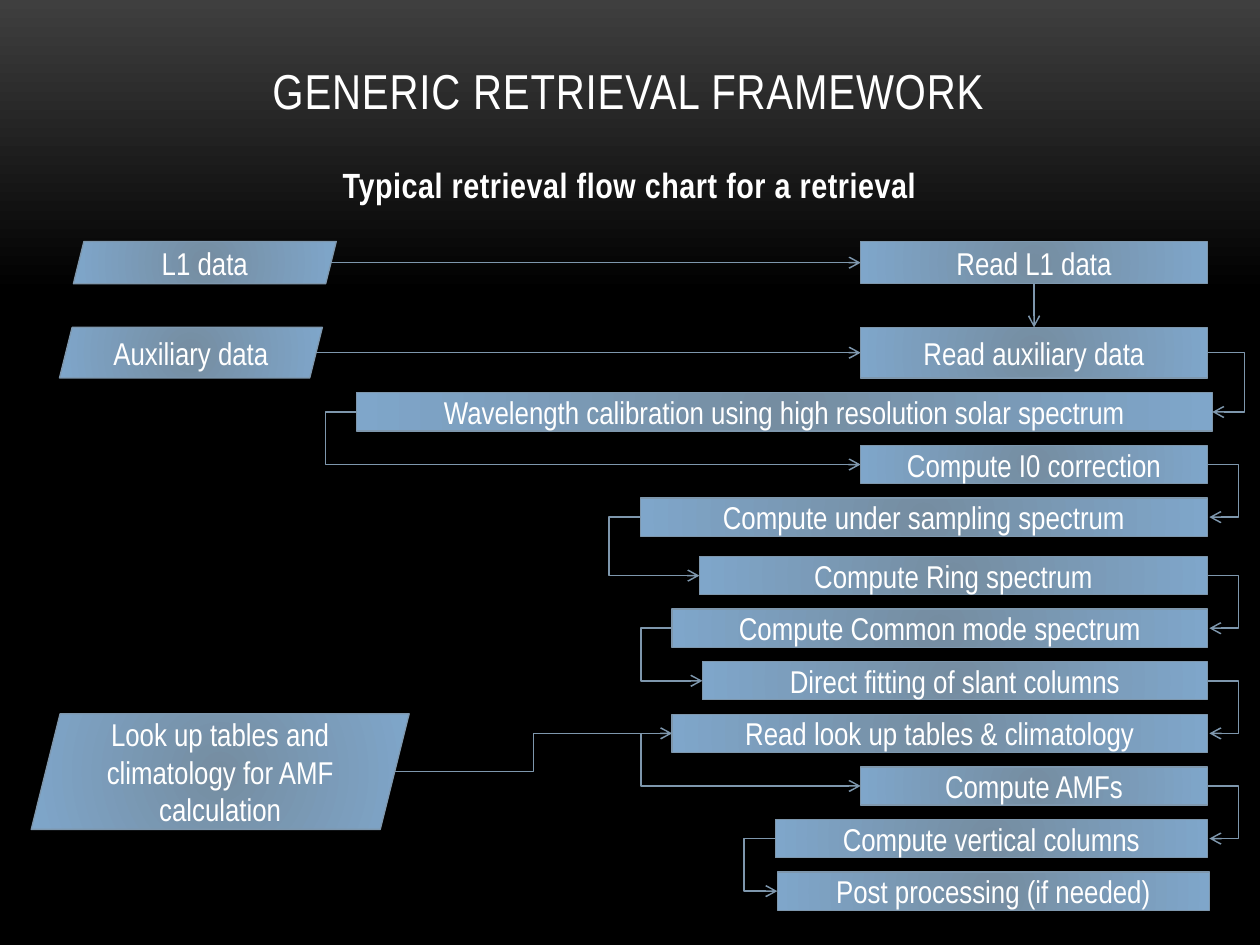
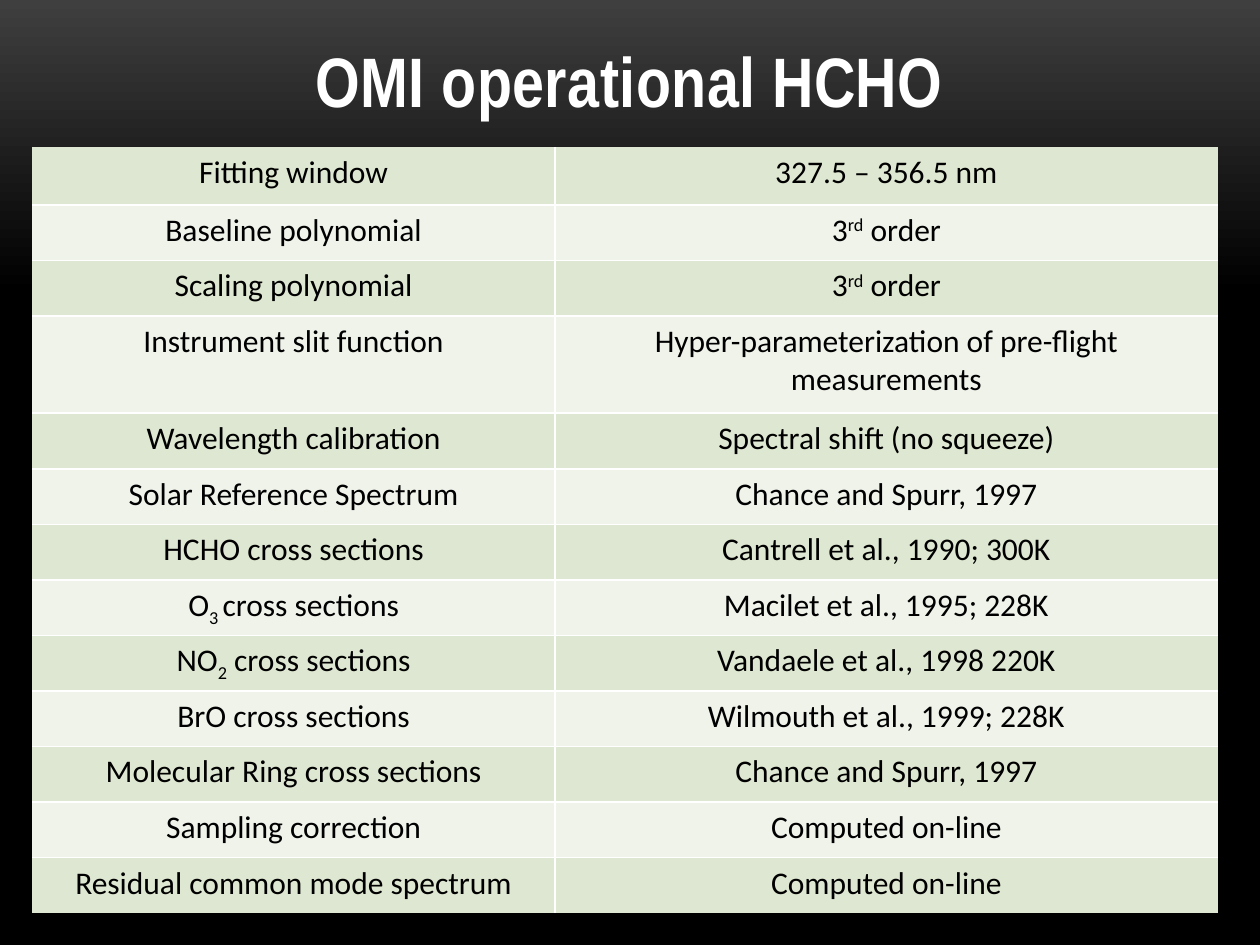
from lxml.etree import SubElement
from pptx import Presentation
from pptx.dml.color import RGBColor
from pptx.enum.shapes import MSO_CONNECTOR, MSO_SHAPE
from pptx.enum.text import MSO_ANCHOR, PP_ALIGN
from pptx.oxml.ns import qn
from pptx.util import Cm, Pt

WHITE = RGBColor(0xFF, 0xFF, 0xFF)
BLACK = RGBColor(0x00, 0x00, 0x00)
CHARCOAL = RGBColor(0x3F, 0x3F, 0x3F)
SLATE = RGBColor(0x75, 0x8D, 0xA1)
SKY = RGBColor(0x7F, 0xA6, 0xCA)
STEEL = RGBColor(0x7E, 0x97, 0xAD)
SAGE = RGBColor(0xDE, 0xE7, 0xD1)
PALE_SAGE = RGBColor(0xEF, 0xF3, 0xEA)
HEADING_FONT, TABLE_FONT = "Arial Narrow", "Calibri"

FRAMEWORK_TITLE = "GENERIC RETRIEVAL FRAMEWORK"
FRAMEWORK_SUBTITLE = "Typical retrieval flow chart for a retrieval"
SETTINGS_TITLE = "OMI operational HCHO"

# Text, left, width of each processing step, from first to last
STEPS = [
    ("Read L1 data", 17.35, 6.99),
    ("Read auxiliary data", 17.35, 6.99),
    ("Wavelength calibration using high resolution solar spectrum", 7.19, 17.25),
    ("Compute I0 correction", 17.35, 6.99),
    ("Compute under sampling spectrum", 12.91, 11.43),
    ("Compute Ring spectrum", 14.1, 10.24),
    ("Compute Common mode spectrum", 13.55, 10.79),
    ("Direct fitting of slant columns", 14.16, 10.18),
    ("Read look up tables & climatology", 13.55, 10.79),
    ("Compute AMFs", 17.35, 6.99),
    ("Compute vertical columns", 15.63, 8.71),
    ("Post processing (if needed)", 15.67, 8.71),
]
STEP_PITCH, STEP_HEIGHT = 1.06, 0.77
READ_ROWS = [(4.87, 0.85), (6.6, 1.02)]
STEP_ROWS = (
    READ_ROWS
    + [(7.92 + STEP_PITCH * i, STEP_HEIGHT) for i in range(3)]
    + [(11.22 + STEP_PITCH * i, STEP_HEIGHT) for i in range(7)]
)

# Text, box, index of the step that takes the input
INPUTS = [
    ("L1 data", (1.48, 4.87, 5.3, 0.85), 0),
    ("Auxiliary data", (1.2, 6.6, 5.3, 1.02), 1),
    ("Look up tables and climatology for AMF calculation", (0.63, 14.39, 7.62, 2.33), 8),
]

LOOP_REACH = 0.63
WIDE_LOOP_REACH = 0.75
MIN_LOOP_WIDTH = 0.04
TOP, LEFT, BOTTOM, RIGHT = range(4)
PARALLELOGRAM_RIGHT = 5

# A cell is a string, or a list of (text, baseline shift in percent)
THIRD_ORDER = [("3", 0), ("rd", 30), (" order", 0)]
SETTINGS = [
    ("Fitting window", "327.5 – 356.5 nm"),
    ("Baseline polynomial", THIRD_ORDER),
    ("Scaling polynomial", THIRD_ORDER),
    ("Instrument slit function", "Hyper-parameterization of pre-flight measurements"),
    ("Wavelength calibration", "Spectral shift (no squeeze)"),
    ("Solar Reference Spectrum", "Chance and Spurr, 1997"),
    ("HCHO cross sections", "Cantrell et al., 1990; 300K"),
    ([("O", 0), ("3 ", -25), ("cross sections", 0)], "Macilet et al., 1995; 228K"),
    ([("NO", 0), ("2", -25), (" cross sections", 0)], "Vandaele et al., 1998 220K"),
    ("BrO cross sections", "Wilmouth et al., 1999; 228K"),
    ("Molecular Ring cross sections", "Chance and Spurr, 1997"),
    ("Sampling correction", "Computed on-line"),
    ("Residual common mode spectrum", "Computed on-line"),
]
COLUMN_WIDTHS = [10.54, 13.36]
ROW_HEIGHT = 1.12
ROW_HEIGHT_EXCEPTIONS = {0: 1.17, 3: 1.96}


def add_xml(parent, tag, **attributes):
    return SubElement(parent, qn(tag), {k: str(v) for k, v in attributes.items()})


def paint_gradient(fill, owner, stops):
    """Give fill the (percent, colour) stops and return its bare XML for the shading."""
    fill.gradient()
    gradient = owner.find(".//" + qn("a:gradFill"))
    for child in list(gradient):
        gradient.remove(child)
    stop_list = add_xml(gradient, "a:gsLst")
    for percent, colour in stops:
        stop = add_xml(stop_list, "a:gs", pos=percent * 1000)
        add_xml(stop, "a:srgbClr", val=colour)
    return gradient


def format_font(font, name, size, colour, bold=False):
    for key, value in {"name": name, "size": Pt(size), "bold": bold}.items():
        setattr(font, key, value)
    font.color.rgb = colour


def place(shape, left, top, width, height):
    box = {"left": left, "top": top, "width": width, "height": height}
    for key, value in box.items():
        setattr(shape, key, Cm(value))


def fill_placeholder(shape, text, box, size, spacing, bold=False):
    place(shape, *box)
    shape.text_frame.text = text
    paragraph = shape.text_frame.paragraphs[0]
    properties = paragraph._p.get_or_add_pPr()
    properties.set("marL", "0")
    properties.set("indent", "0")
    paragraph.alignment = PP_ALIGN.CENTER
    paragraph.space_before = Pt(0)
    add_xml(properties, "a:buNone")
    run = paragraph.runs[0]
    format_font(run.font, HEADING_FONT, size, WHITE, bold)
    run._r.get_or_add_rPr().set("spc", str(spacing))


def add_body(slide, text, top, size):
    fill_placeholder(slide.placeholders[1], text, (0.21, top, 24.97, 15.04), size, 30, True)


def add_flow_box(slide, kind, text, box):
    shape = slide.shapes.add_shape(kind, *[Cm(length) for length in box])
    shape.shadow.inherit = False
    gradient = paint_gradient(shape.fill, shape._element, [(0, SLATE), (100, SKY)])
    shading = add_xml(gradient, "a:path", path="circle")
    add_xml(shading, "a:fillToRect", l=100000, t=100000, r=100000, b=100000)
    shape.line.color.rgb = STEEL
    shape.line.width = Pt(0.75)
    frame = shape.text_frame
    frame.vertical_anchor = MSO_ANCHOR.MIDDLE
    frame.text = text
    frame.paragraphs[0].alignment = PP_ALIGN.CENTER
    format_font(frame.paragraphs[0].font, HEADING_FONT, 18, WHITE)
    return shape


def add_arrow(slide, kind, start=(0, 0)):
    arrow = slide.shapes.add_connector(kind, *start, *start)
    arrow.line.color.rgb = STEEL
    arrow.line.width = Pt(0.85)
    add_xml(arrow.line._get_or_add_ln(), "a:tailEnd", type="arrow")
    add_xml(arrow._element.spPr, "a:effectLst")
    return arrow


def link_input(slide, source, step, kind):
    slant = source.height // 8
    start = (source.left + source.width - slant, source.top + source.height // 2)
    arrow = add_arrow(slide, kind, start)
    ends = arrow._element.find(".//" + qn("p:cNvCxnSpPr"))
    add_xml(ends, "a:stCxn", id=source.shape_id, idx=PARALLELOGRAM_RIGHT)
    arrow.end_connect(step, LEFT)


def link_loop(slide, source, target, side, reach):
    """Join the same side of two steps with an elbow that reaches out beyond them.

    The bend is a share of the elbow's width, so aligned steps get a minimum width.
    """
    arrow = add_arrow(slide, MSO_CONNECTOR.ELBOW)
    arrow.begin_connect(source, side)
    arrow.end_connect(target, side)
    arrow.end_x = max(arrow.end_x, arrow.begin_x + Cm(MIN_LOOP_WIDTH))
    outward = Cm(reach) if side == RIGHT else -Cm(reach)
    bend = round(100000 * outward / (arrow.end_x - arrow.begin_x))
    guides = arrow._element.spPr.find(qn("a:prstGeom")).get_or_add_avLst()
    add_xml(guides, "a:gd", name="adj1", fmla=f"val {bend}")
    if side == LEFT:
        transform = arrow._element.spPr.find(qn("a:xfrm"))
        for key, value in {"rot": "10800000", "flipH": "1", "flipV": "1"}.items():
            transform.set(key, value)


def build_framework(slide):
    fill_placeholder(slide.shapes.title, FRAMEWORK_TITLE, (3.96, 0, 17.42, 2.54), 28, 50)
    slide.shapes.title.text_frame.vertical_anchor = MSO_ANCHOR.BOTTOM
    add_body(slide, FRAMEWORK_SUBTITLE, 3.16, 20)

    steps = [
        add_flow_box(slide, MSO_SHAPE.RECTANGLE, text, (left, top, width, height))
        for (text, left, width), (top, height) in zip(STEPS, STEP_ROWS)
    ]
    for text, box, step in INPUTS:
        source = add_flow_box(slide, MSO_SHAPE.PARALLELOGRAM, text, box)
        level = box[1::2] == STEP_ROWS[step]
        kind = MSO_CONNECTOR.STRAIGHT if level else MSO_CONNECTOR.ELBOW
        link_input(slide, source, steps[step], kind)

    down = add_arrow(slide, MSO_CONNECTOR.STRAIGHT)
    down.begin_connect(steps[0], BOTTOM)
    down.end_connect(steps[1], TOP)
    for i in range(1, len(steps) - 1):
        side = RIGHT if i % 2 else LEFT
        reach = WIDE_LOOP_REACH if i == 1 else LOOP_REACH
        link_loop(slide, steps[i], steps[i + 1], side, reach)


def add_borders(cell, inner_edges):
    """Draw the inner edges in white and leave the others without a line."""
    properties = cell._tc.get_or_add_tcPr()
    for edge in ("a:lnL", "a:lnR", "a:lnT", "a:lnB"):
        line = add_xml(properties, edge, w=Pt(1))
        if edge in inner_edges:
            add_xml(add_xml(line, "a:solidFill"), "a:srgbClr", val=WHITE)
        else:
            add_xml(line, "a:noFill")


def fill_cell(cell, content, colour):
    cell.fill.solid()
    cell.fill.fore_color.rgb = colour
    paragraph = cell.text_frame.paragraphs[0]
    paragraph.alignment = PP_ALIGN.CENTER
    for text, baseline in [(content, 0)] if isinstance(content, str) else content:
        run = paragraph.add_run()
        run.text = text
        format_font(run.font, TABLE_FONT, 18, BLACK)
        if baseline:
            run._r.get_or_add_rPr().set("baseline", str(baseline * 1000))


def build_settings(slide):
    title = slide.shapes.title
    title._element.getparent().remove(title._element)
    add_body(slide, SETTINGS_TITLE, 0.62, 40)

    heights = [ROW_HEIGHT_EXCEPTIONS.get(i, ROW_HEIGHT) for i in range(len(SETTINGS))]
    table = slide.shapes.add_table(
        len(SETTINGS), len(COLUMN_WIDTHS), Cm(0.65), Cm(2.96),
        Cm(sum(COLUMN_WIDTHS)), Cm(sum(heights)),
    ).table
    table.first_row = table.horz_banding = False
    for column, width in zip(table.columns, COLUMN_WIDTHS):
        column.width = Cm(width)
    for i, (setting, height) in enumerate(zip(SETTINGS, heights)):
        table.rows[i].height = Cm(height)
        for j, content in enumerate(setting):
            inner_edges = {"a:lnL" if j else "a:lnR"}
            if i > 0:
                inner_edges.add("a:lnT")
            if i < len(SETTINGS) - 1:
                inner_edges.add("a:lnB")
            cell = table.cell(i, j)
            add_borders(cell, inner_edges)
            fill_cell(cell, content, PALE_SAGE if i % 2 else SAGE)


def main():
    prs = Presentation()
    prs.slide_width, prs.slide_height = Cm(25.4), Cm(19.05)
    master = prs.slide_master
    backdrop = paint_gradient(
        master.background.fill, master._element, [(0, CHARCOAL), (31, BLACK), (100, BLACK)]
    )
    add_xml(backdrop, "a:lin", ang=5400000, scaled=0)
    for build in (build_framework, build_settings):
        build(prs.slides.add_slide(prs.slide_layouts[1]))
    prs.save("out.pptx")


if __name__ == "__main__":
    main()
